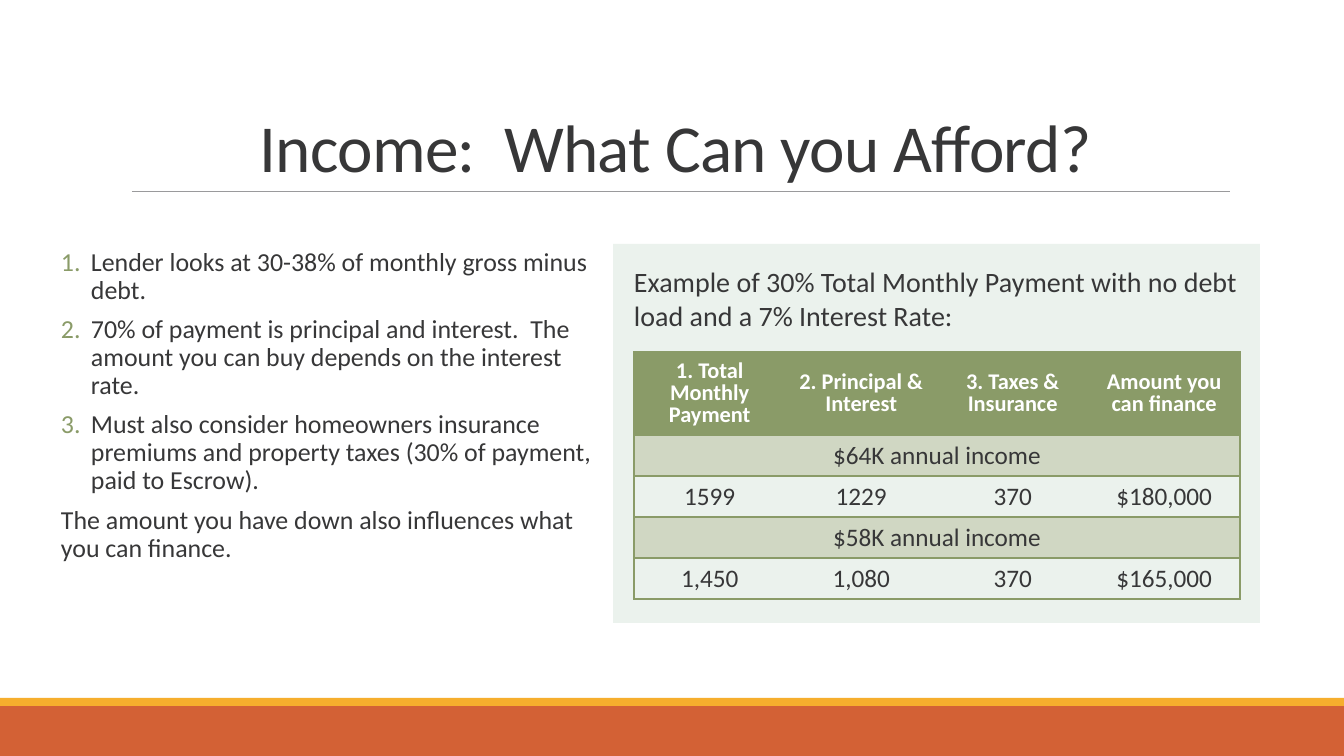
from lxml import etree
from pptx import Presentation
from pptx.dml.color import RGBColor
from pptx.enum.shapes import MSO_CONNECTOR as Connector, MSO_SHAPE as Shape
from pptx.enum.text import MSO_ANCHOR as Anchor, MSO_AUTO_SIZE as AutoSize, PP_ALIGN as Align
from pptx.oxml import parse_xml
from pptx.oxml.ns import nsdecls, qn
from pptx.util import Emu, Pt

PX = 914400 / 100.8
THEME = {
    "font": "Calibri",
    "ink": "373738", "white": "FFFFFF", "green": "8A9B68", "sage": "D0D7C3",
    "mint": "EBF2ED", "rust": "D36135", "amber": "F6AE2D", "grey": "9A9A9C",
    "title": 48, "list": 18.5, "caption": 20, "header": 16, "cell": 18,
}
NO_GRID_STYLE = "{2D5ABB26-0587-4C30-8999-92F81FD0307C}"


def px(*lengths):
    return [Emu(round(length * PX)) for length in lengths]


def write(paragraph, text, size, color="ink", bold=False, **layout):
    for name, value in layout.items():
        setattr(paragraph, name, value)
    run = paragraph.add_run()
    run.text = text
    font = {"name": THEME["font"], "size": Pt(THEME[size]), "bold": bold}
    for name, value in font.items():
        setattr(run.font, name, value)
    run.font.color.rgb = RGBColor.from_string(THEME[color])
    return run


presentation = Presentation()
presentation.slide_width, presentation.slide_height = px(1344, 756)
slide = presentation.slides.add_slide(presentation.slide_layouts[5])

panels = [
    ((0, 706, 1344, 50), "rust"),
    ((0, 698, 1344, 8), "amber"),
    ((613, 244, 647, 379), "mint"),
]
for box, color in panels:
    panel = slide.shapes.add_shape(Shape.RECTANGLE, *px(*box))
    panel.shadow.inherit = False
    panel.fill.solid()
    panel.fill.fore_color.rgb = RGBColor.from_string(THEME[color])
    panel.line.fill.background()

title_rule = slide.shapes.add_connector(Connector.STRAIGHT, *px(132, 191, 1230, 191))
title_rule.line.color.rgb = RGBColor.from_string(THEME["grey"])
title_rule.line.width = Pt(0.5)
etree.SubElement(title_rule.element.spPr, qn("a:effectLst"))

title = slide.shapes.title
title.left, title.top, title.width, title.height = px(121, 31, 1109, 160)
title_format = {"word_wrap": True, "auto_size": AutoSize.NONE, "vertical_anchor": Anchor.BOTTOM}
for name, value in title_format.items():
    setattr(title.text_frame, name, value)
title_run = write(title.text_frame.paragraphs[0], "Income:  What Can you Afford?", "title",
                  alignment=Align.CENTER, line_spacing=0.85)
title_run.font.element.set("spc", "-50") if hasattr(title_run.font, "element") else \
    title_run.text and title.element.find(".//" + qn("a:rPr")).set("spc", "-50")

text_boxes = [
    ((61, 244, 542, 353), "list", 0.9, [
        ("Lender looks at 30-38% of monthly gross minus debt.", True),
        ("70% of payment is principal and interest.  The amount you can buy "
         "depends on the interest rate.", True),
        ("Must also consider homeowners insurance premiums and property taxes "
         "(30% of payment, paid to Escrow).", True),
        ("The amount you have down also influences what you can finance.", False),
    ]),
    ((634, 260, 606, 79), "caption", 1.0, [
        ("Example of 30% Total Monthly Payment with no debt load and a 7% Interest Rate:", False),
    ]),
]
for box, size, spacing, items in text_boxes:
    frame = slide.shapes.add_textbox(*px(*box)).text_frame
    frame.word_wrap = True
    frame.margin_left = frame.margin_right = 0
    for index, (text, numbered) in enumerate(items):
        paragraph = frame.add_paragraph() if index else frame.paragraphs[0]
        if numbered:
            indent = px(30)[0]
            properties = paragraph._p.get_or_add_pPr()
            properties.set("marL", str(indent))
            properties.set("indent", str(-indent))
            bullet_color = etree.SubElement(properties, qn("a:buClr"))
            etree.SubElement(bullet_color, qn("a:srgbClr"), val=THEME["green"])
            etree.SubElement(properties, qn("a:buFont"), typeface=THEME["font"])
            etree.SubElement(properties, qn("a:buAutoNum"), type="arabicPeriod")
        write(paragraph, text, size, line_spacing=spacing,
              space_before=Pt(6 if index else 0), space_after=Pt(2))

rows = [
    ["1. Total Monthly Payment", "2. Principal & Interest", "3. Taxes & Insurance",
     "Amount you can finance"],
    ["$64K annual income"],
    ["1599", "1229", "370", "$180,000"],
    ["$58K annual income"],
    ["1,450", "1,080", "370", "$165,000"],
]
table_frame = slide.shapes.add_table(len(rows), 4, *px(634, 352, 606, 247))
table_frame.element.find(".//" + qn("a:tableStyleId")).text = NO_GRID_STYLE
table = table_frame.table
for row_index, texts in enumerate(rows):
    is_header, is_band = row_index == 0, len(texts) == 1
    table.rows[row_index].height = px(83 if is_header else 41)[0]
    if is_band:
        table.cell(row_index, 0).merge(table.cell(row_index, 3))
    for column_index in range(4):
        cell = table.cell(row_index, column_index)
        if is_header or is_band:
            cell.fill.solid()
            cell.fill.fore_color.rgb = RGBColor.from_string(THEME["green" if is_header else "sage"])
            cell.vertical_anchor = Anchor.MIDDLE
        else:
            cell.fill.background()
        if column_index < len(texts):
            write(cell.text_frame.paragraphs[0], texts[column_index],
                  "header" if is_header else "cell", "white" if is_header else "ink", is_header,
                  alignment=Align.CENTER, line_spacing=0.8 if is_header else 1.0)
        edges = {
            "L": column_index == 0,
            "R": column_index == 3 or is_band,
            "T": is_header or is_band,
            "B": is_band or row_index == len(rows) - 1,
        }
        sides = [side for side, drawn in edges.items() if drawn]
        for position, side in enumerate(sides):
            border = parse_xml(
                f'<a:ln{side} {nsdecls("a")} w="{Pt(1)}"><a:solidFill>'
                f'<a:srgbClr val="{THEME["green"]}"/></a:solidFill></a:ln{side}>')
            cell._tc.get_or_add_tcPr().insert(position, border)

presentation.save("out.pptx")
